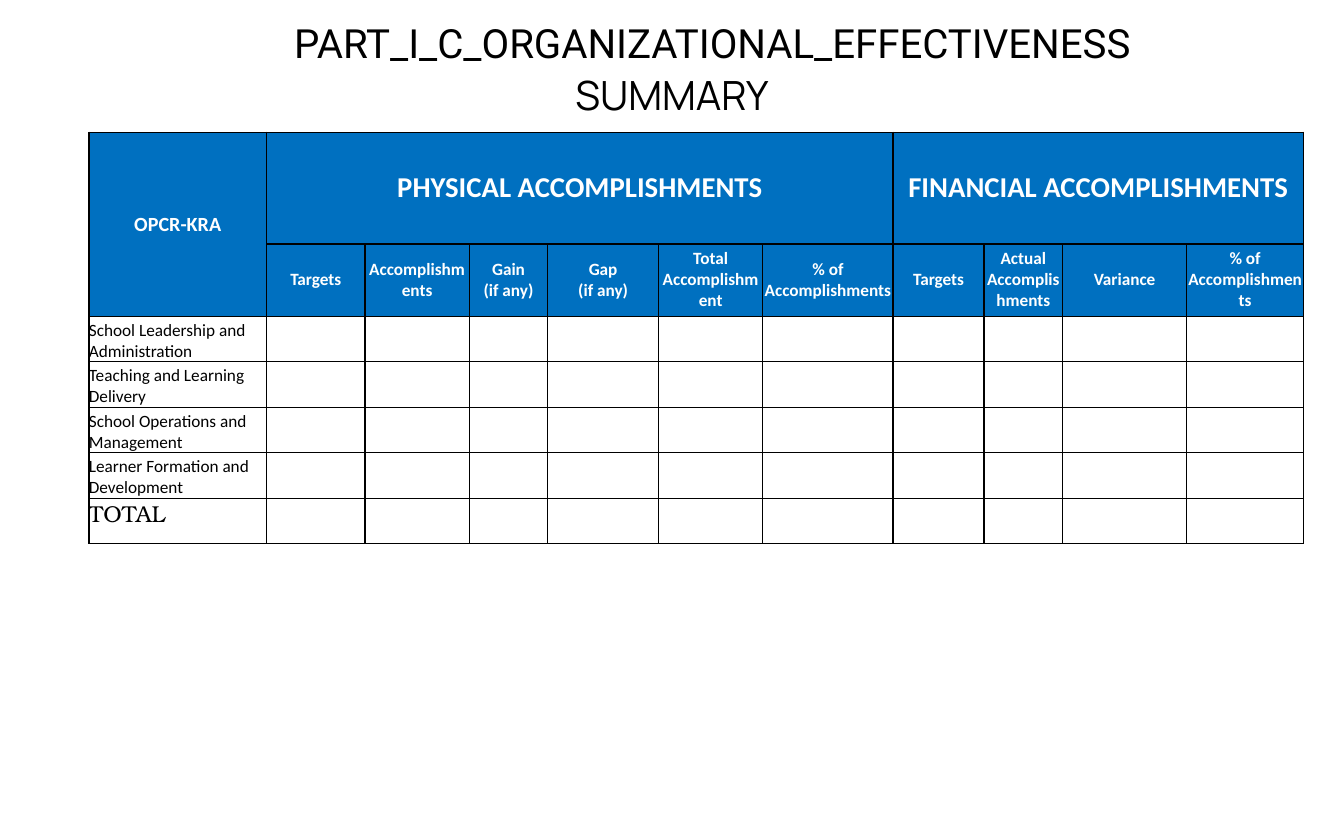
import pptx
import pptx.util
import pptx.dml.color
import pptx.enum.text
import pptx.oxml
import pptx.oxml.ns

Inches = pptx.util.Inches
RGBColor = pptx.dml.color.RGBColor
ALIGN = pptx.enum.text.PP_ALIGN
ANCHOR = pptx.enum.text.MSO_ANCHOR

BLACK = RGBColor(0x00, 0x00, 0x00)
WHITE = RGBColor(0xFF, 0xFF, 0xFF)
BLUE = RGBColor(0x00, 0x70, 0xC0)


def write(tf, text, size=12, font="Calibri", color=BLACK, bold=False,
          align=ALIGN.LEFT, spacing=None):
    p = tf.paragraphs[0]
    p.text = text
    p.alignment = align
    p.line_spacing = spacing
    for r in p.runs:
        r.font.size = pptx.util.Pt(size)
        r.font.name = font
        r.font.bold = bold
        r.font.color.rgb = color


def add_borders(cell):
    tc_pr = cell._tc.get_or_add_tcPr()
    for side in ("lnL", "lnR", "lnT", "lnB"):
        tc_pr.append(pptx.oxml.parse_xml(
            f'<a:{side} {pptx.oxml.ns.nsdecls("a")} w="12700"><a:solidFill>'
            f'<a:srgbClr val="{BLACK}"/></a:solidFill></a:{side}>'))


prs = pptx.Presentation()
prs.slide_width = Inches(13)
prs.slide_height = Inches(8)
slide = prs.slides.add_slide(prs.slide_layouts[5])

# Headings
title = slide.shapes.title
title.left, title.top = Inches(0.78), Inches(0.13)
title.width, title.height = Inches(12.22), Inches(0.57)
tf = title.text_frame
tf.auto_size = pptx.enum.text.MSO_AUTO_SIZE.NONE
tf.vertical_anchor = ANCHOR.TOP
write(tf, "PART_I_C_ORGANIZATIONAL_EFFECTIVENESS", size=28, font="Roboto",
      align=ALIGN.CENTER)

subtitle = slide.shapes.add_textbox(Inches(1.95), Inches(0.71), Inches(9.1), Inches(0.46))
tf = subtitle.text_frame
tf.word_wrap = True
tf.margin_left = tf.margin_right = tf.margin_top = tf.margin_bottom = 0
write(tf, "SUMMARY", size=28, font="Manrope", align=ALIGN.CENTER, spacing=0.97)

# Summary table
col_widths = [1.72, 0.95, 1.01, 0.76, 1.07, 1.01, 1.26, 0.88, 0.76, 1.2, 1.13]
row_heights = [1.08, 0.7] + [0.44] * 5
measures = ["Targets", "Accomplishments", "Gain\n(if any)", "Gap\n(if any)",
            "Total Accomplishment", "% of Accomplishments", "Targets",
            "Actual Accomplishments", "Variance", "% of Accomplishments"]
result_areas = ["School Leadership and Administration", "Teaching and Learning Delivery",
                "School Operations and Management", "Learner Formation and Development"]

table = slide.shapes.add_table(
    len(row_heights), len(col_widths), Inches(0.86), Inches(1.28),
    Inches(sum(col_widths)), Inches(sum(row_heights))).table
table.first_row = table.horz_banding = False
for column, width in zip(table.columns, col_widths):
    column.width = Inches(width)

for i, (row, height) in enumerate(zip(table.rows, row_heights)):
    row.height = Inches(height)
    for cell in row.cells:
        cell.margin_left = cell.margin_right = cell.margin_top = cell.margin_bottom = 0
        add_borders(cell)
        if i < 2:
            cell.vertical_anchor = ANCHOR.MIDDLE
            cell.fill.solid()
            cell.fill.fore_color.rgb = BLUE
        else:
            cell.fill.background()

table.cell(0, 0).merge(table.cell(1, 0))
table.cell(0, 1).merge(table.cell(0, 6))
table.cell(0, 7).merge(table.cell(0, 10))

headers = [(0, 0, "OPCR-KRA", 14), (0, 1, "PHYSICAL ACCOMPLISHMENTS", 20),
           (0, 7, "FINANCIAL ACCOMPLISHMENTS", 20)]
headers += [(1, col, measure, 12) for col, measure in enumerate(measures, 1)]
for row, col, text, size in headers:
    write(table.cell(row, col).text_frame, text, size=size, color=WHITE, bold=True,
          align=ALIGN.CENTER)

for row, area in enumerate(result_areas, 2):
    cell = table.cell(row, 0)
    cell.vertical_anchor = ANCHOR.BOTTOM
    write(cell.text_frame, area)
write(table.cell(6, 0).text_frame, "TOTAL", size=16, font="TeX Gyre Bonum")

prs.save("out.pptx")
